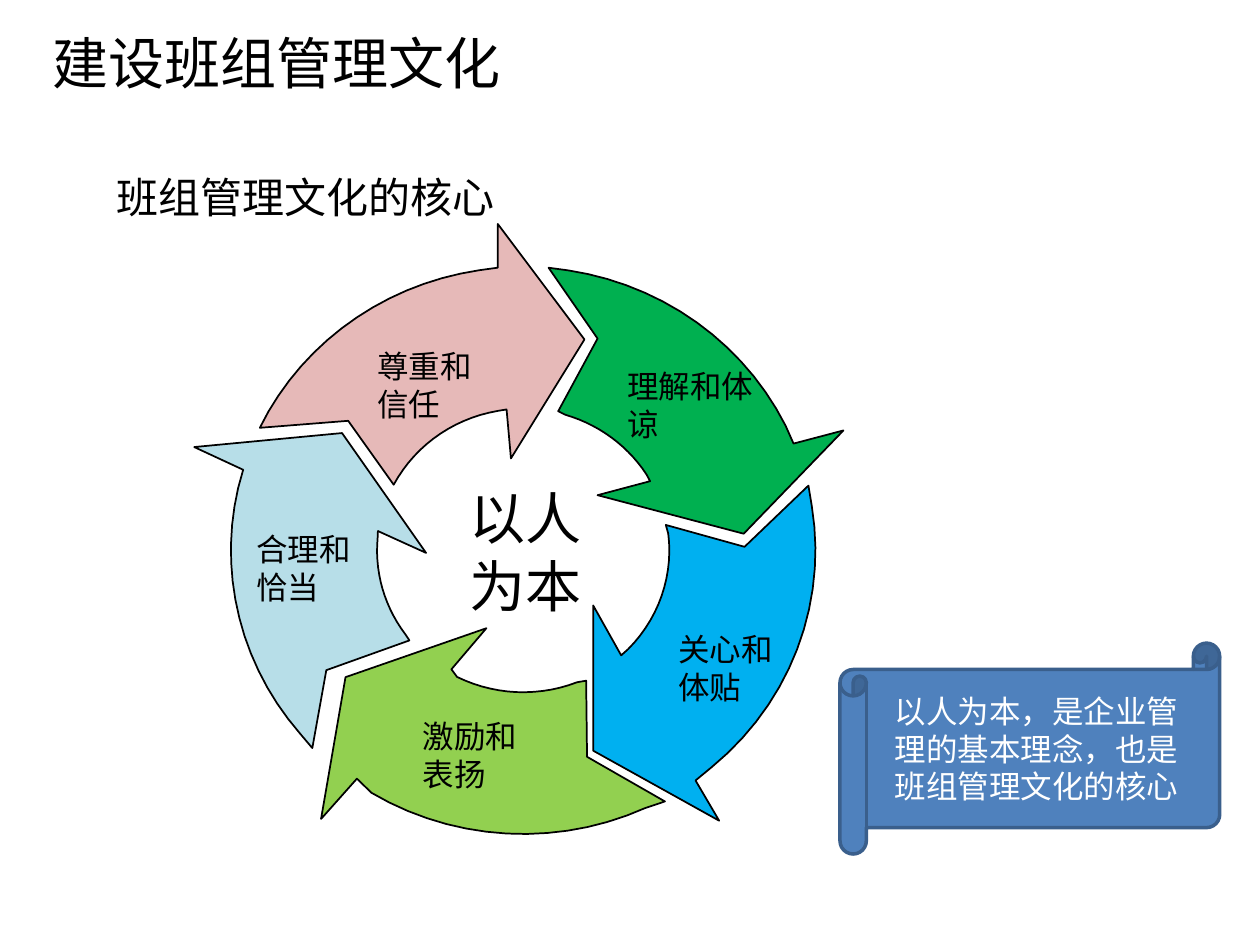
from math import atan2, cos, pi, sin
from typing import NamedTuple

from pptx import Presentation
from pptx.dml.color import RGBColor as Rgb
from pptx.enum.shapes import MSO_SHAPE as Kind
from pptx.enum.text import MSO_ANCHOR as Anchor, MSO_AUTO_SIZE as Fit, PP_ALIGN as Align
from pptx.util import Pt

Spot = tuple[float, float]

HUES = {
    "black": "000000", "white": "FFFFFF", "pink": "E6B9B8", "green": "00B050",
    "blue": "00B0F0", "lime": "92D050", "sky": "B7DEE8", "scroll": "4F81BD", "edge": "3A5F8C",
}
HUB = (299, 314.6)
INNER = (83.5, 81)
OUTER = (167, 162)
STEPS = 16
LATIN, HAN = "Calibri", "Noto Sans CJK SC"


class Arrow(NamedTuple):
    """One ring arrow: the ends of both arcs, its head and its notch."""
    hue: str
    inner: tuple[Spot, Spot]
    head: tuple[Spot, Spot, Spot]
    outer: tuple[Spot, Spot]
    notch: Spot


class Label(NamedTuple):
    """A caption on an arrow."""
    text: str
    left: float
    top: float
    width: float = 69


ARROWS = [
    Arrow("pink", ((225, 277), (289.5, 234)), ((292, 262), (334, 194), (284.5, 128)),
          ((284.5, 153), (148.5, 244.5)), (199, 240.5)),
    Arrow("green", ((319, 235), (371.5, 275)), ((341.5, 283), (425, 305), (482, 246)),
          ((453.5, 253.5), (313.5, 153)), (341.5, 193.5)),
    Arrow("blue", ((380.5, 300), (355, 374.5)), ((339, 346), (339, 429), (411, 469)),
          ((397.5, 446), (462, 277.5)), (425.5, 312.5)),
    Arrow("lime", ((335, 389), (258, 382.5)), ((278, 359), (197.5, 387), (183.5, 468)),
          ((204, 445), (380, 458)), (335.5, 432.5)),
    Arrow("sky", ((234, 366), (216, 303.5)), ((243.5, 316), (195.5, 247.5), (111, 255.5)),
          ((139, 268.5), (178.5, 427.5)), (186.5, 383)),
]
LABELS = [
    Label("激励和表扬", 234, 409.5), Label("尊重和信任", 208, 198),
    Label("理解和体谅", 351, 209.5, 86), Label("关心和体贴", 380, 359.5),
    Label("合理和恰当", 139, 302.5),
]


def tint(name: str) -> Rgb:
    """Look up a colour."""
    return Rgb.from_string(HUES[name])


def place(shape, left: float, top: float, width: float, height: float) -> None:
    """Move and size a shape in points."""
    shape.left, shape.top = Pt(left), Pt(top)
    shape.width, shape.height = Pt(width), Pt(height)


def write(shape, text: str, size: float, face: str = LATIN, hue: str = "black",
          align=Align.LEFT, anchor=Anchor.MIDDLE, indent: float = 0) -> None:
    """Put one styled paragraph in a shape."""
    frame = shape.text_frame
    frame.text = text
    frame.word_wrap = True
    frame.auto_size = Fit.NONE
    frame.vertical_anchor = anchor
    para = frame.paragraphs[0]
    para.alignment = align
    para.space_before = Pt(0)
    props = para._p.get_or_add_pPr()
    props.set("marL", "0")
    props.set("indent", str(Pt(indent)))
    if shape.is_placeholder:
        props.append(props.makeelement(
            "{http://schemas.openxmlformats.org/drawingml/2006/main}buNone", {}))
    font = para.font
    font.name, font.size, font.color.rgb = face, Pt(size), tint(hue)


def paint(shape, fill: str, line: str, width: float) -> None:
    """Set fill and outline, without shadow."""
    shape.shadow.inherit = False
    shape.fill.solid()
    shape.fill.fore_color.rgb = tint(fill)
    shape.line.color.rgb = tint(line)
    shape.line.width = Pt(width)


def arc(ends: tuple[Spot, Spot], radii: Spot) -> list[Spot]:
    """Trace the shorter arc about the hub between two ends."""
    start, stop = (atan2((y - HUB[1]) / radii[1], (x - HUB[0]) / radii[0]) for x, y in ends)
    sweep = (stop - start + pi) % (2 * pi) - pi
    turns = (start + sweep * i / STEPS for i in range(1, STEPS))
    mids = [(HUB[0] + radii[0] * cos(t), HUB[1] + radii[1] * sin(t)) for t in turns]
    return [ends[0], *mids, ends[1]]


def draw_arrow(slide, arrow: Arrow) -> None:
    """Draw one arrow of the ring."""
    spots = [*arc(arrow.inner, INNER), *arrow.head, *arc(arrow.outer, OUTER), arrow.notch]
    dots = [(Pt(x), Pt(y)) for x, y in spots]
    pen = slide.shapes.build_freeform(*dots[0])
    pen.add_line_segments(dots[1:], close=True)
    paint(pen.convert_to_shape(), arrow.hue, "black", 1)


def draw_label(slide, label: Label) -> None:
    """Draw one caption."""
    box = slide.shapes.add_textbox(Pt(label.left), Pt(label.top), Pt(label.width), Pt(44))
    frame = box.text_frame
    frame.margin_right = frame.margin_top = frame.margin_bottom = 0
    frame.margin_left = Pt(7.5)
    write(box, label.text, 18)


def main() -> None:
    """Build the slide."""
    deck = Presentation()
    deck.slide_width, deck.slide_height = Pt(720), Pt(540)
    slide = deck.slides.add_slide(deck.slide_layouts[1])
    title, body = slide.placeholders
    place(title, 0, 0, 720, 70.5)
    write(title, "建设班组管理文化", 32, HAN, indent=23)
    place(body, 59.5, 94.5, 646.5, 34)
    write(body, "班组管理文化的核心", 24, anchor=Anchor.TOP)
    for arrow in ARROWS:
        draw_arrow(slide, arrow)
    for label in LABELS:
        draw_label(slide, label)
    core = slide.shapes.add_textbox(Pt(261), Pt(273), Pt(104.5), Pt(85))
    write(core, "以人为本", 32, anchor=Anchor.TOP)
    scroll = slide.shapes.add_shape(Kind.HORIZONTAL_SCROLL, Pt(480), Pt(367.5), Pt(217), Pt(120.5))
    paint(scroll, "scroll", "edge", 2)
    scroll.text_frame.margin_left = scroll.text_frame.margin_right = Pt(14)
    write(scroll, "以人为本，是企业管理的基本理念，也是班组管理文化的核心", 18, HAN, "white", Align.CENTER)
    deck.save("out.pptx")


if __name__ == "__main__":
    main()
